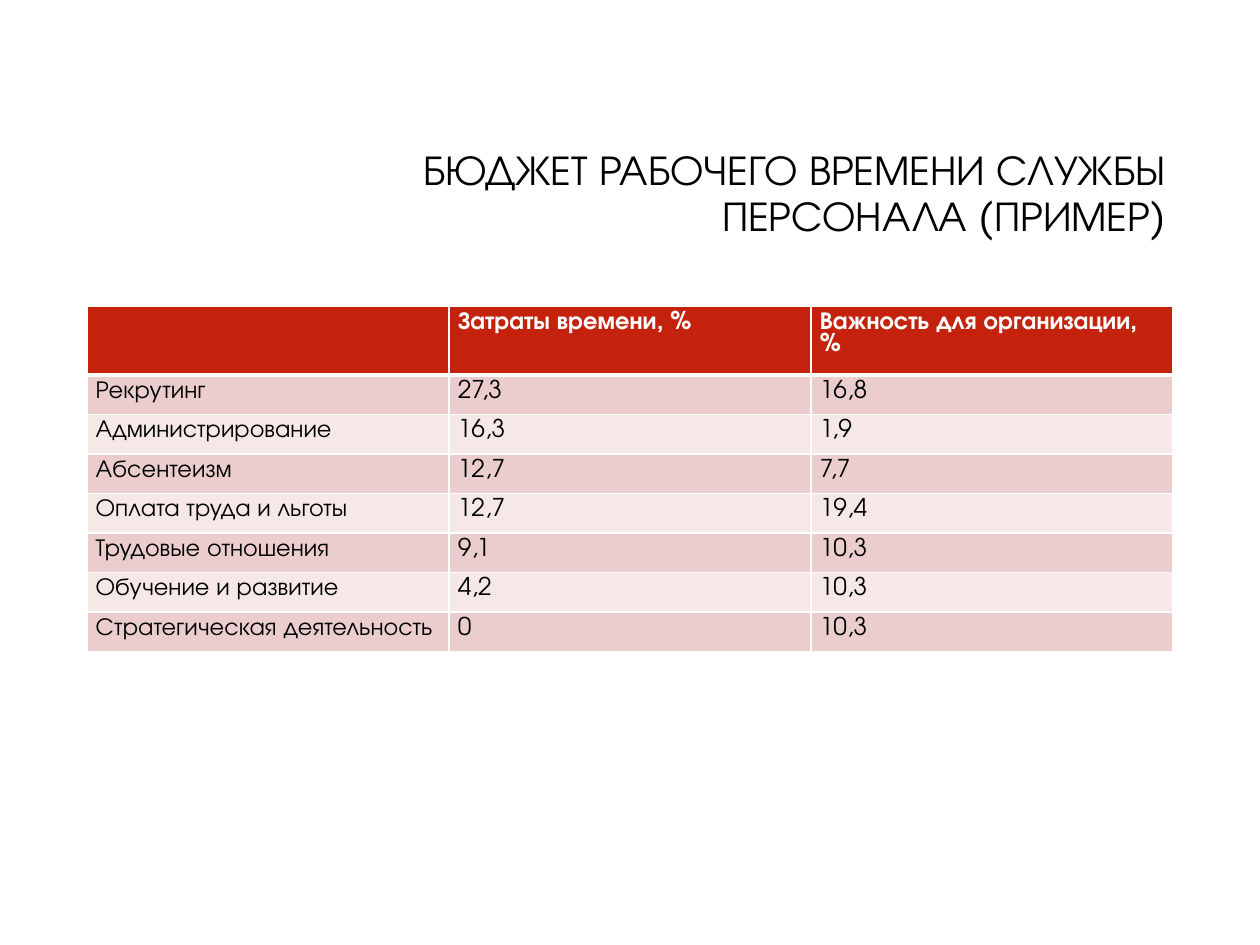
from dataclasses import dataclass
from typing import NamedTuple

from lxml.etree import SubElement
from pptx import Presentation
from pptx.dml.color import RGBColor
from pptx.enum.text import MSO_ANCHOR, PP_ALIGN
from pptx.oxml.ns import qn
from pptx.util import Inches, Pt


@dataclass(frozen=True)
class Theme:
    font: str = "TeX Gyre Adventor"
    ink: str = "000000"
    white: str = "FFFFFF"
    head: str = "C4220D"
    bands: tuple = ("EACDCC", "F5E8E7")
    title: int = 24
    body: int = 14


class Box(NamedTuple):
    """Percent of the slide's width and height."""
    left: float
    top: float
    width: float
    height: float


class Row(NamedTuple):
    task: str
    time: str
    weight: str


THEME = Theme()
WIDE, HIGH = Inches(10), Inches(7.5)
TITLE = Box(23.8, 11.2, 69.7, 18.8)
GRID = Box(6.9, 32.4, 86.2, 34)
HEAD_H = Inches(0.42)

ROWS = [
    Row("", "Затраты времени, %", "Важность для организации, %"),
    Row("Рекрутинг", "27,3", "16,8"),
    Row("Администрирование", "16,3", "1,9"),
    Row("Абсентеизм", "12,7", "7,7"),
    Row("Оплата труда и льготы", "12,7", "19,4"),
    Row("Трудовые отношения", "9,1", "10,3"),
    Row("Обучение и развитие", "4,2", "10,3"),
    Row("Стратегическая деятельность", "0", "10,3"),
]


def place(box: Box) -> tuple:
    return tuple(int(part * side / 100) for part, side in zip(box, (WIDE, HIGH) * 2))


def write(para, text: str, size: int, color: str, bold: bool = False) -> None:
    para.font.size = Pt(size)
    if not text:
        return
    run = para.add_run()
    run.text = text
    run.font.name = THEME.font
    run.font.size = Pt(size)
    run.font.bold = bold
    run.font.color.rgb = RGBColor.from_string(color)


def edge(cell, side: str, width: float) -> None:
    line = SubElement(cell._tc.get_or_add_tcPr(), qn(f"a:{side}"), w=str(Pt(width)))
    fill = SubElement(line, qn("a:solidFill"))
    SubElement(fill, qn("a:srgbClr"), val=THEME.white)


def draw_cell(cell, text: str, row: int) -> None:
    head = row == 0
    # Borders come before the fill in the cell's XML
    for side in ("lnL", "lnR", "lnT", "lnB"):
        thick = (head and side == "lnB") or (row == 1 and side == "lnT")
        edge(cell, side, 3 if thick else 1)
    cell.fill.solid()
    cell.fill.fore_color.rgb = RGBColor.from_string(
        THEME.head if head else THEME.bands[(row - 1) % 2])
    cell.margin_left = cell.margin_right = Inches(0.07)
    cell.margin_top = cell.margin_bottom = Inches(0.04)
    para = cell.text_frame.paragraphs[0]
    write(para, text, THEME.body, THEME.white if head else THEME.ink, head)


def draw_title(slide, text: str) -> None:
    frame = slide.shapes.add_textbox(*place(TITLE)).text_frame
    frame.word_wrap = True
    frame.vertical_anchor = MSO_ANCHOR.MIDDLE
    para = frame.paragraphs[0]
    para.alignment = PP_ALIGN.RIGHT
    para.line_spacing = 0.9
    write(para, text, THEME.title, THEME.ink)


def draw_table(slide, rows: list[Row]) -> None:
    area = place(GRID)
    table = slide.shapes.add_table(len(rows), len(Row._fields), *area).table
    row_h = (area[3] - HEAD_H) // (len(rows) - 1)
    for i, row in enumerate(rows):
        table.rows[i].height = row_h if i else HEAD_H
        for j, text in enumerate(row):
            draw_cell(table.cell(i, j), text, i)


def main() -> None:
    deck = Presentation()
    deck.slide_width, deck.slide_height = WIDE, HIGH
    slide = deck.slides.add_slide(deck.slide_layouts[6])
    draw_title(slide, "БЮДЖЕТ РАБОЧЕГО ВРЕМЕНИ СЛУЖБЫ ПЕРСОНАЛА (ПРИМЕР)")
    draw_table(slide, ROWS)
    deck.save("out.pptx")


if __name__ == "__main__":
    main()
